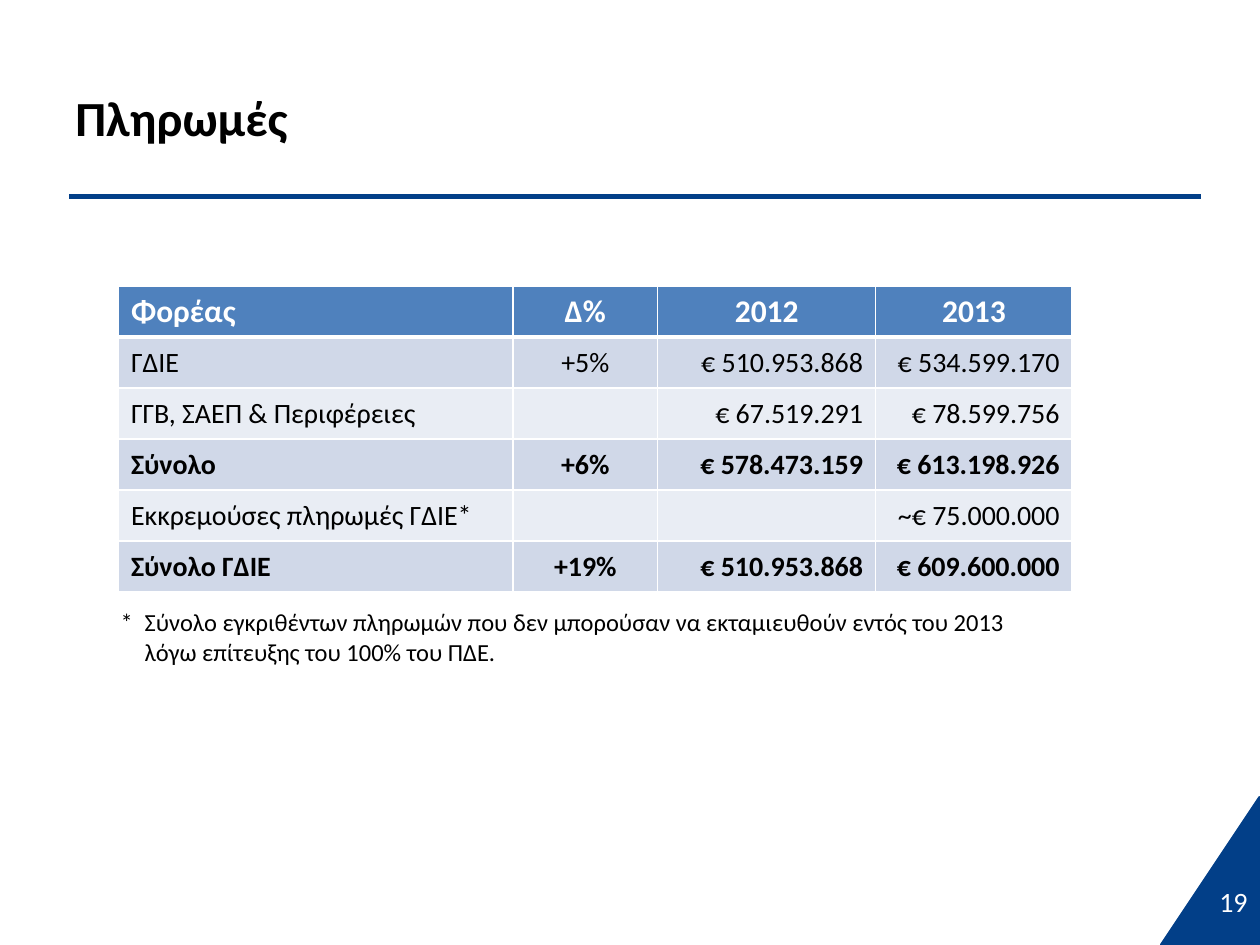
from lxml.etree import SubElement
from pptx import Presentation
from pptx.dml.color import RGBColor
from pptx.enum.shapes import MSO_CONNECTOR as Connector, MSO_SHAPE as Shape
from pptx.enum.text import MSO_ANCHOR as Anchor, PP_ALIGN as Align
from pptx.oxml.ns import qn
from pptx.util import Inches, Pt

COLORS = {
    "navy": "023F88", "header": "4F81BD", "odd": "D0D8E8", "even": "E9EDF4",
    "white": "FFFFFF", "black": "000000",
}
UNIT = 0.1  # inches per grid step: 100 columns by 75 rows


def grid(*steps):
    return [Inches(step * UNIT) for step in steps]


def color(name):
    return RGBColor.from_string(COLORS[name])


class SlideBuilder:
    """Holds the style and the current slide."""

    font = "Calibri"

    def __init__(self, deck):
        self.page = deck.slides.add_slide(deck.slide_layouts[6])

    def add_span(self, frame, text, size, ink="black", bold=False, align=Align.LEFT):
        para = frame.paragraphs[0]
        para.alignment = align
        span = para.add_run()
        span.text = text
        span.font.name = self.font
        span.font.size = Pt(size)
        span.font.bold = bold
        span.font.color.rgb = color(ink)
        return para

    def text(self, area, text, size, anchor=Anchor.MIDDLE, **style):
        box = self.page.shapes.add_textbox(*grid(*area))
        box.text_frame.word_wrap = True
        box.text_frame.vertical_anchor = anchor
        return self.add_span(box.text_frame, text, size, **style)

    def corner(self, area, fill):
        corner = self.page.shapes.add_shape(Shape.RIGHT_TRIANGLE, *grid(*area))
        corner.shadow.inherit = False
        corner.fill.solid()
        corner.fill.fore_color.rgb = color(fill)
        corner.line.color.rgb = color(fill)
        corner.line.width = Pt(2)
        corner.element.spPr.find(qn("a:xfrm")).set("flipH", "1")

    def rule(self, start, end, ink, width):
        rule = self.page.shapes.add_connector(Connector.STRAIGHT, *grid(*start, *end))
        rule.line.color.rgb = color(ink)
        rule.line.width = Pt(width)
        SubElement(rule.element.spPr, qn("a:effectLst"))

    def borders(self, cell, bottom):
        props = cell._tc.get_or_add_tcPr()
        widths = {"a:lnL": 1, "a:lnR": 1, "a:lnT": 1, "a:lnB": bottom}
        for position, (side, width) in enumerate(widths.items()):
            line = props.makeelement(qn(side), {"w": str(Pt(width))})
            fill = SubElement(line, qn("a:solidFill"))
            SubElement(fill, qn("a:srgbClr"), val=COLORS["white"])
            props.insert(position, line)

    def table(self, corner, widths, height, rows, bold_rows):
        area = grid(*corner, sum(widths), height * len(rows))
        table = self.page.shapes.add_table(len(rows), len(widths), *area).table
        for column, width in zip(table.columns, grid(*widths)):
            column.width = width
        for r, row in enumerate(rows):
            table.rows[r].height = grid(height)[0]
            header = r == 0
            fill = "header" if header else ("even", "odd")[r % 2]
            numbers = Align.CENTER if header else Align.RIGHT
            aligns = (Align.LEFT, Align.CENTER, numbers, numbers)
            for c, (text, align) in enumerate(zip(row, aligns)):
                cell = table.cell(r, c)
                cell.vertical_anchor = Anchor.MIDDLE
                cell.fill.solid()
                cell.fill.fore_color.rgb = color(fill)
                # The line under the header is thicker
                self.borders(cell, bottom=3 if header else 1)
                if text:
                    self.add_span(cell.text_frame, text, 18 if header else 16,
                                  "white" if header else "black", r in bold_rows, align)


PAYMENTS = [
    ("Φορέας", "Δ%", "2012", "2013"),
    ("ΓΔΙΕ", "+5%", "€ 510.953.868", "€ 534.599.170"),
    ("ΓΓΒ, ΣΑΕΠ & Περιφέρειες", "", "€ 67.519.291", "€ 78.599.756"),
    ("Σύνολο", "+6%", "€ 578.473.159", "€ 613.198.926"),
    ("Εκκρεμούσες πληρωμές ΓΔΙΕ*", "", "", "~€ 75.000.000"),
    ("Σύνολο ΓΔΙΕ", "+19%", "€ 510.953.868", "€ 609.600.000"),
]
FOOTNOTE = ("*\tΣύνολο εγκριθέντων πληρωμών που δεν μπορούσαν να εκταμιευθούν "
            "εντός του 2013 λόγω επίτευξης του 100% του ΠΔΕ.")


def main():
    deck = Presentation()
    deck.slide_width, deck.slide_height = grid(100, 75)
    slide = SlideBuilder(deck)

    # Page frame: corner, title rule, title and page number
    slide.corner((92.2, 63.3, 7.8, 11.7), "navy")
    slide.rule((5.5, 15.6), (95.3, 15.6), "navy", 2.75)
    slide.text((5, 3, 90, 12.5), "Πληρωμές", 28, bold=True)
    slide.text((76.7, 69.5, 23.3, 4), "19", 16, ink="white", align=Align.RIGHT)

    # Payments table
    slide.table((9.4, 22.7), (31.3, 11.5, 17.3, 15.6), 4.05, PAYMENTS, bold_rows=(0, 3, 5))

    # Footnote with a hanging indent
    note = slide.text((8.6, 47.7, 76.6, 5.7), FOOTNOTE, 14, anchor=Anchor.TOP)
    indent = Inches(0.19)
    props = note._p.get_or_add_pPr()
    props.set("marL", str(indent))
    props.set("indent", str(-indent))

    deck.save("out.pptx")


if __name__ == "__main__":
    main()
